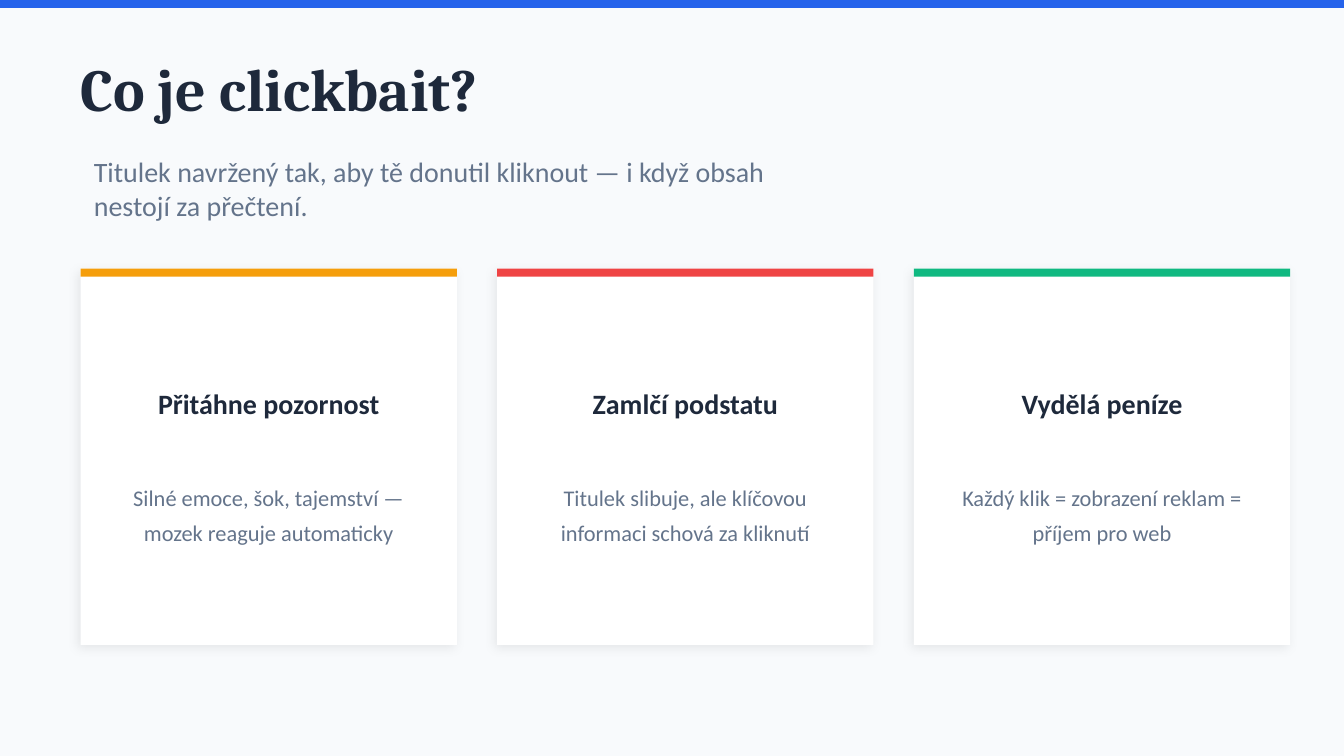
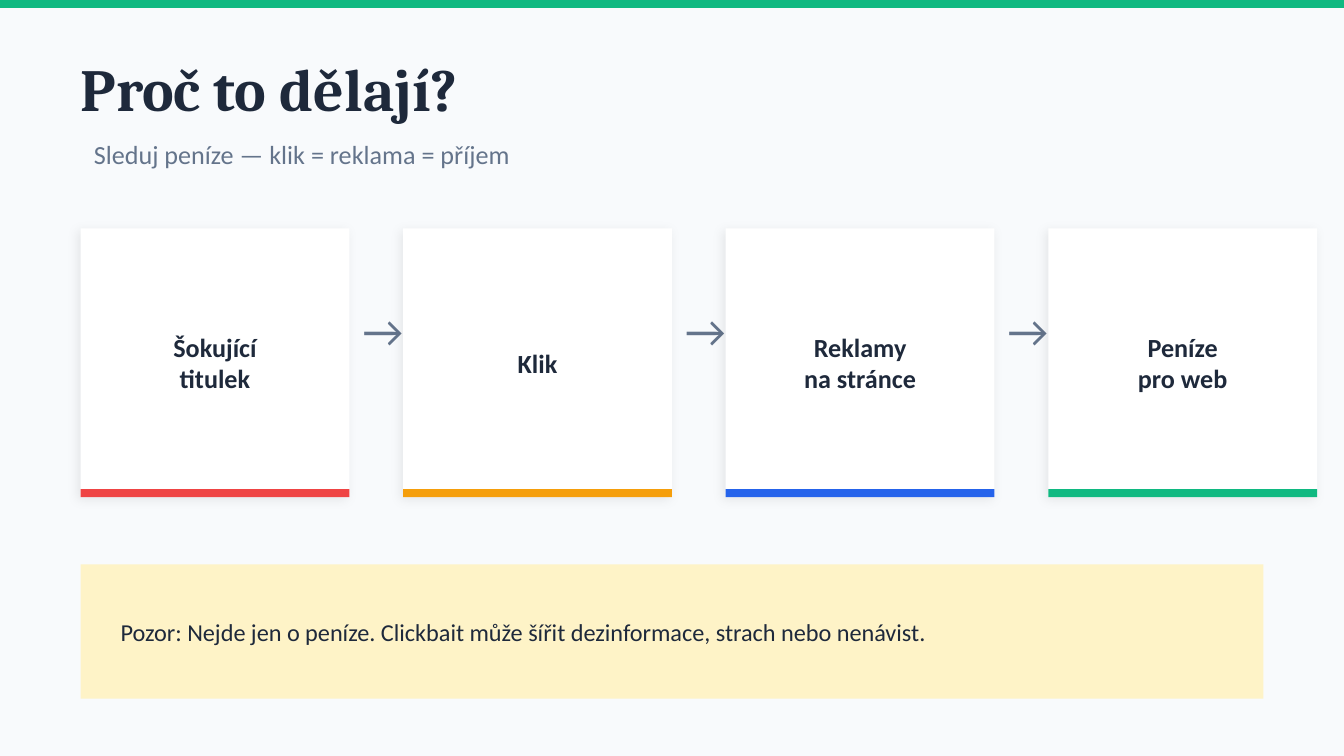
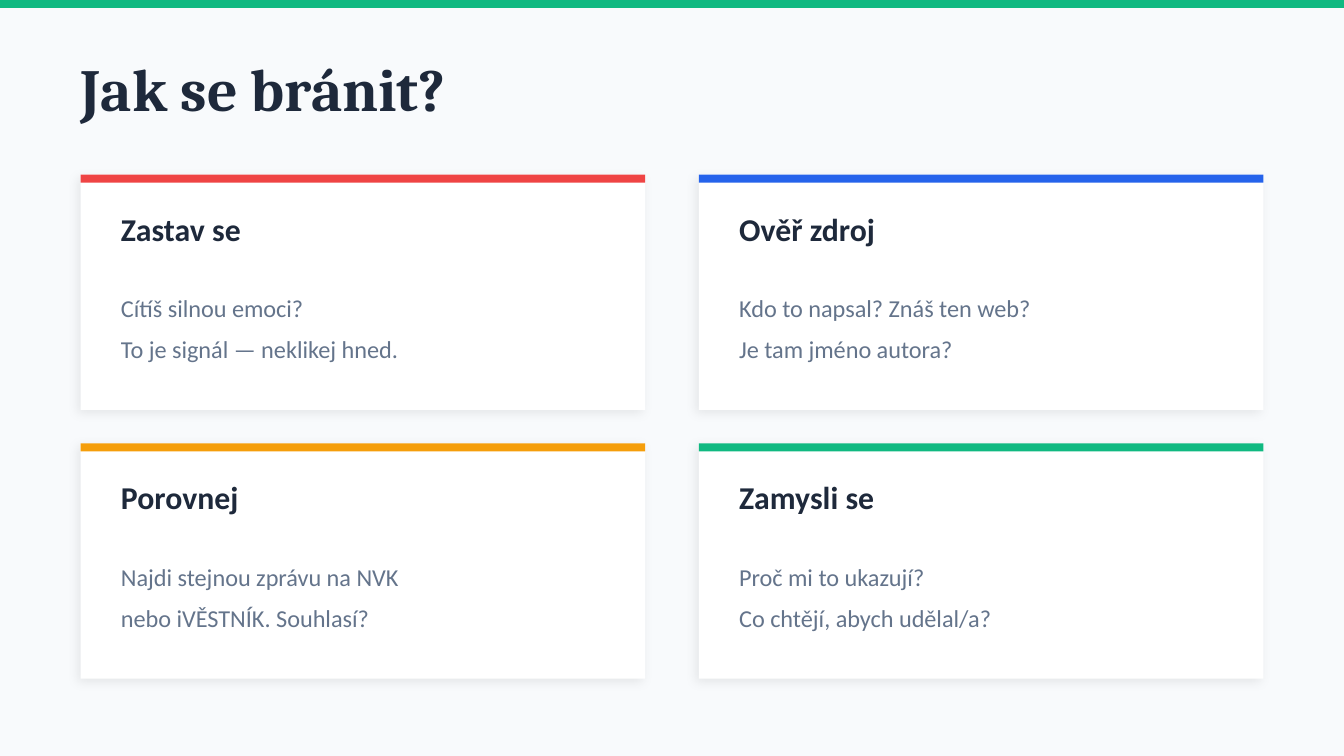
"""Builds three slides about clickbait: what it is, why it exists, how to resist it."""
import lxml.etree
import pptx
import pptx.dml.color
import pptx.enum.shapes
import pptx.enum.text
import pptx.oxml.ns
import pptx.util

PX = 4572
WIDTH, HEIGHT = 2000, 1125
LEFT, BAND = 120, 12
COLORS = {
    "page": "F8FAFC", "card": "FFFFFF", "ink": "1E293B", "muted": "64748B",
    "blue": "2563EB", "green": "10B981", "amber": "F59E0B", "red": "EF4444",
    "note": "FEF3C7",
}
CENTER = pptx.enum.text.PP_ALIGN.CENTER

DEFINITION = "Titulek navržený tak, aby tě donutil kliknout — i když obsah nestojí za přečtení."
TRAITS = [
    ("amber", "Přitáhne pozornost", "Silné emoce, šok, tajemství — mozek reaguje automaticky"),
    ("red", "Zamlčí podstatu", "Titulek slibuje, ale klíčovou informaci schová za kliknutí"),
    ("green", "Vydělá peníze", "Každý klik = zobrazení reklam = příjem pro web"),
]
MOTIVE = "Sleduj peníze — klik = reklama = příjem"
STEPS = [
    ("red", ["Šokující", "titulek"]),
    ("amber", ["Klik"]),
    ("blue", ["Reklamy", "na stránce"]),
    ("green", ["Peníze", "pro web"]),
]
WARNING = "Pozor: Nejde jen o peníze. Clickbait může šířit dezinformace, strach nebo nenávist."
DEFENCES = [
    ("red", "Zastav se", ["Cítíš silnou emoci?", "To je signál — neklikej hned."]),
    ("blue", "Ověř zdroj", ["Kdo to napsal? Znáš ten web?", "Je tam jméno autora?"]),
    ("amber", "Porovnej", ["Najdi stejnou zprávu na NVK", "nebo iVĚSTNÍK. Souhlasí?"]),
    ("green", "Zamysli se", ["Proč mi to ukazují?", "Co chtějí, abych udělal/a?"]),
]


def rgb(name):
    return pptx.dml.color.RGBColor.from_string(COLORS[name])


def emu(*lengths):
    return [pptx.util.Emu(n * PX) for n in lengths]


def add_rect(slide, x, y, w, h, color):
    sp = slide.shapes.add_shape(pptx.enum.shapes.MSO_SHAPE.RECTANGLE, *emu(x, y, w, h))
    sp.shadow.inherit = False
    sp.fill.solid()
    sp.fill.fore_color.rgb = rgb(color)
    sp.line.fill.background()
    return sp


def add_card(slide, x, y, w, h, accent, band_at_bottom=False):
    qn = pptx.oxml.ns.qn
    sp = add_rect(slide, x, y, w, h, "card")
    effects = sp._element.spPr.find(qn("a:effectLst"))
    shadow = lxml.etree.SubElement(
        effects, qn("a:outerShdw"), blurRad=str(pptx.util.Pt(6)),
        dist=str(pptx.util.Pt(2)), dir=str(135 * 60000), algn="bl", rotWithShape="0")
    tint = lxml.etree.SubElement(shadow, qn("a:srgbClr"), val="000000")
    lxml.etree.SubElement(tint, qn("a:alpha"), val="8000")
    add_rect(slide, x, y + h - BAND if band_at_bottom else y, w, BAND, accent)


def add_text(slide, x, y, w, h, lines, size, color="ink", bold=False, font="Calibri",
             align=None, spacing=None, inset=True):
    tf = slide.shapes.add_textbox(*emu(x, y, w, h)).text_frame
    tf.word_wrap = True
    tf.vertical_anchor = pptx.enum.text.MSO_ANCHOR.MIDDLE
    if not inset:
        tf.margin_left = tf.margin_top = tf.margin_right = tf.margin_bottom = 0
    for i, line in enumerate(lines):
        p = tf.add_paragraph() if i else tf.paragraphs[0]
        p.alignment = align
        p.line_spacing = spacing
        r = p.add_run()
        r.text = line
        r.font.size = pptx.util.Pt(size)
        r.font.name = font
        r.font.bold = bold
        r.font.color.rgb = rgb(color)


def add_slide(prs, title, accent):
    slide = prs.slides.add_slide(prs.slide_layouts[6])
    slide.background.fill.solid()
    slide.background.fill.fore_color.rgb = rgb("page")
    add_rect(slide, 0, 0, WIDTH, BAND, accent)
    add_text(slide, LEFT, 60, 1800, 140, [title], 32, bold=True, font="Cambria", inset=False)
    return slide


def build_traits(prs):
    slide = add_slide(prs, "Co je clickbait?", "blue")
    add_text(slide, LEFT, 220, 1100, 120, [DEFINITION], 15, "muted")
    side, gap, top, pad = 560, 60, 400, 40
    for i, (accent, heading, body) in enumerate(TRAITS):
        x = LEFT + i * (side + gap)
        add_card(slide, x, top, side, side, accent)
        add_text(slide, x + pad, top + 160, side - 2 * pad, 80, [heading], 15,
                 bold=True, align=CENTER)
        add_text(slide, x + pad, top + 240, side - 2 * pad, 240, [body], 12, "muted",
                 align=CENTER, spacing=1.3)


def build_steps(prs):
    slide = add_slide(prs, "Proč to dělají?", "green")
    add_text(slide, LEFT, 190, 1200, 80, [MOTIVE], 14, "muted")
    side, gap, top, pad = 400, 80, 340, 20
    for i, (accent, lines) in enumerate(STEPS):
        x = LEFT + i * (side + gap)
        if i:
            add_text(slide, x - gap, top + 100, gap, 100, ["→"], 24, "muted", align=CENTER)
        add_card(slide, x, top, side, side, accent, band_at_bottom=True)
        add_text(slide, x + pad, top + 100, side - 2 * pad, 200, lines, 14,
                 bold=True, align=CENTER)
    add_rect(slide, LEFT, 840, 1760, 200, "note")
    add_text(slide, LEFT + 40, 840, 1680, 200, [WARNING], 13)


def build_defences(prs):
    slide = add_slide(prs, "Jak se bránit?", "green")
    w, h, gap_x, gap_y, top, pad = 840, 350, 80, 50, 260, 60
    for i, (accent, heading, lines) in enumerate(DEFENCES):
        row, col = divmod(i, 2)
        x, y = LEFT + col * (w + gap_x), top + row * (h + gap_y)
        add_card(slide, x, y, w, h, accent)
        add_text(slide, x + pad, y + 40, 700, 80, [heading], 17, bold=True, inset=False)
        add_text(slide, x + pad, y + 130, 700, 180, lines, 13, "muted", spacing=1.4,
                 inset=False)


def main():
    prs = pptx.Presentation()
    prs.slide_width, prs.slide_height = emu(WIDTH, HEIGHT)
    build_traits(prs)
    build_steps(prs)
    build_defences(prs)
    prs.save("out.pptx")


if __name__ == "__main__":
    main()
